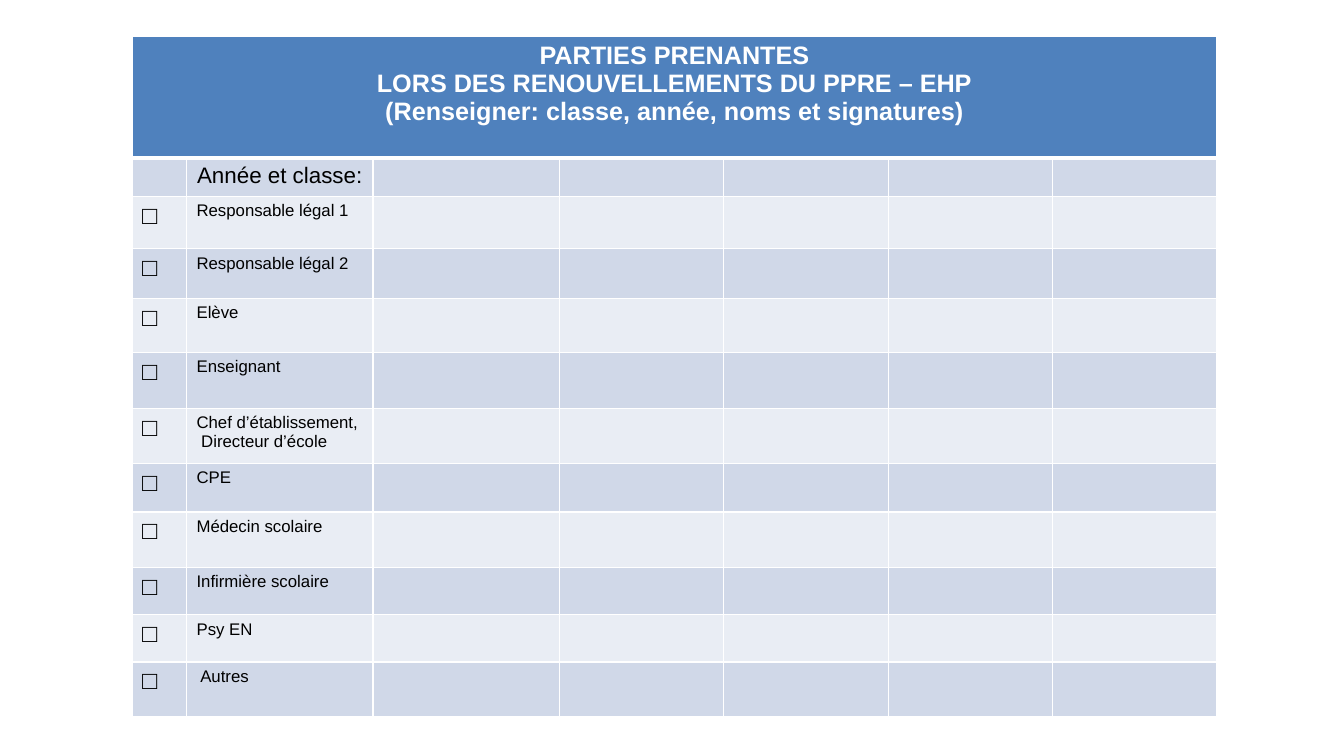
from lxml import etree
from pptx import Presentation
from pptx.dml.color import RGBColor
from pptx.enum.text import MSO_ANCHOR, PP_ALIGN
from pptx.oxml.ns import qn
from pptx.util import Inches, Pt

CENTER, LEFT = PP_ALIGN.CENTER, PP_ALIGN.LEFT
TOP = MSO_ANCHOR.TOP
BLUE, BAND_DARK, BAND_LIGHT = "4F81BD", "D0D8E8", "E9EDF4"
WHITE, BLACK = "FFFFFF", "000000"

TITLE = ["PARTIES PRENANTES",
         "LORS DES RENOUVELLEMENTS DU PPRE – EHP",
         "(Renseigner: classe, année, noms et signatures)"]
ROLES = ["Responsable légal 1", "Responsable légal 2", "Elève", "Enseignant",
         "Chef d’établissement,\n Directeur d’école", "CPE",
         "Médecin scolaire", "Infirmière scolaire", "Psy EN", " Autres"]
COLS = [0.54, 1.85, 1.85] + [1.63] * 4
ROWS = [1.21, 0.38, 0.52, 0.49, 0.54, 0.55, 0.55, 0.48, 0.55, 0.47, 0.47, 0.54]


def rgb(value):
    return RGBColor.from_string(value)


def set_borders(cell, **widths):
    """White lines on all four sides, 1 pt unless a side is given."""
    tcPr = cell._tc.get_or_add_tcPr()
    for side in "LRTB":
        ln = etree.SubElement(tcPr, qn("a:ln" + side), w=str(Pt(widths.get(side, 1))))
        fill = etree.SubElement(ln, qn("a:solidFill"))
        etree.SubElement(fill, qn("a:srgbClr"), val=WHITE)


def write(cell, lines, size, color=BLACK, bold=False, align=LEFT):
    tf = cell.text_frame
    for i, line in enumerate(lines):
        p = tf.add_paragraph() if i else tf.paragraphs[0]
        p.alignment = align
        r = p.add_run()
        r.text = line
        font = {"name": "Arial", "size": Pt(size), "bold": bold}
        for key, value in font.items():
            setattr(r.font, key, value)
        r.font.color.rgb = rgb(color)


def style_cells(table):
    """Banded fills and borders, with a thick line under the title row."""
    for i, row in enumerate(table.rows):
        band = BAND_DARK if i % 2 else BAND_LIGHT
        thick = {0: {"B": 3}, 1: {"T": 3}}.get(i, {})
        for cell in row.cells:
            set_borders(cell, **thick)
            cell.fill.solid()
            cell.fill.fore_color.rgb = rgb(band if i else BLUE)
            cell.vertical_anchor = TOP


def shrink_empty_cells(table):
    """Keep empty cells from stretching their row."""
    for cell in table.iter_cells():
        if not cell.text_frame.text:
            p = cell.text_frame.paragraphs[0]
            etree.SubElement(p._p, qn("a:endParaRPr"), sz="1200")


def add_signature_table(s, left, top):
    frame = s.shapes.add_table(len(ROWS), len(COLS), Inches(left), Inches(top),
                               Inches(sum(COLS)), Inches(sum(ROWS)))
    table = frame.table
    table.first_row = table.horz_banding = False
    for column, width in zip(table.columns, COLS):
        column.width = Inches(width)
    for row, height in zip(table.rows, ROWS):
        row.height = Inches(height)
    style_cells(table)

    # Title and year rows
    table.cell(0, 0).merge(table.cell(0, len(COLS) - 1))
    write(table.cell(0, 0), TITLE, 18, WHITE, True, CENTER)
    write(table.cell(1, 1), ["Année et classe:"], 16, align=CENTER)

    # One checkbox and one role per row
    for i, role in enumerate(ROLES, start=2):
        write(table.cell(i, 0), ["□"], 18)
        write(table.cell(i, 1), role.split("\n"), 12)
    shrink_empty_cells(table)


def main():
    prs = Presentation()
    prs.slide_width, prs.slide_height = Inches(13.33), Inches(7.5)
    s = prs.slides.add_slide(prs.slide_layouts[6])
    add_signature_table(s, 1.31, 0.36)
    prs.save("out.pptx")


if __name__ == "__main__":
    main()
